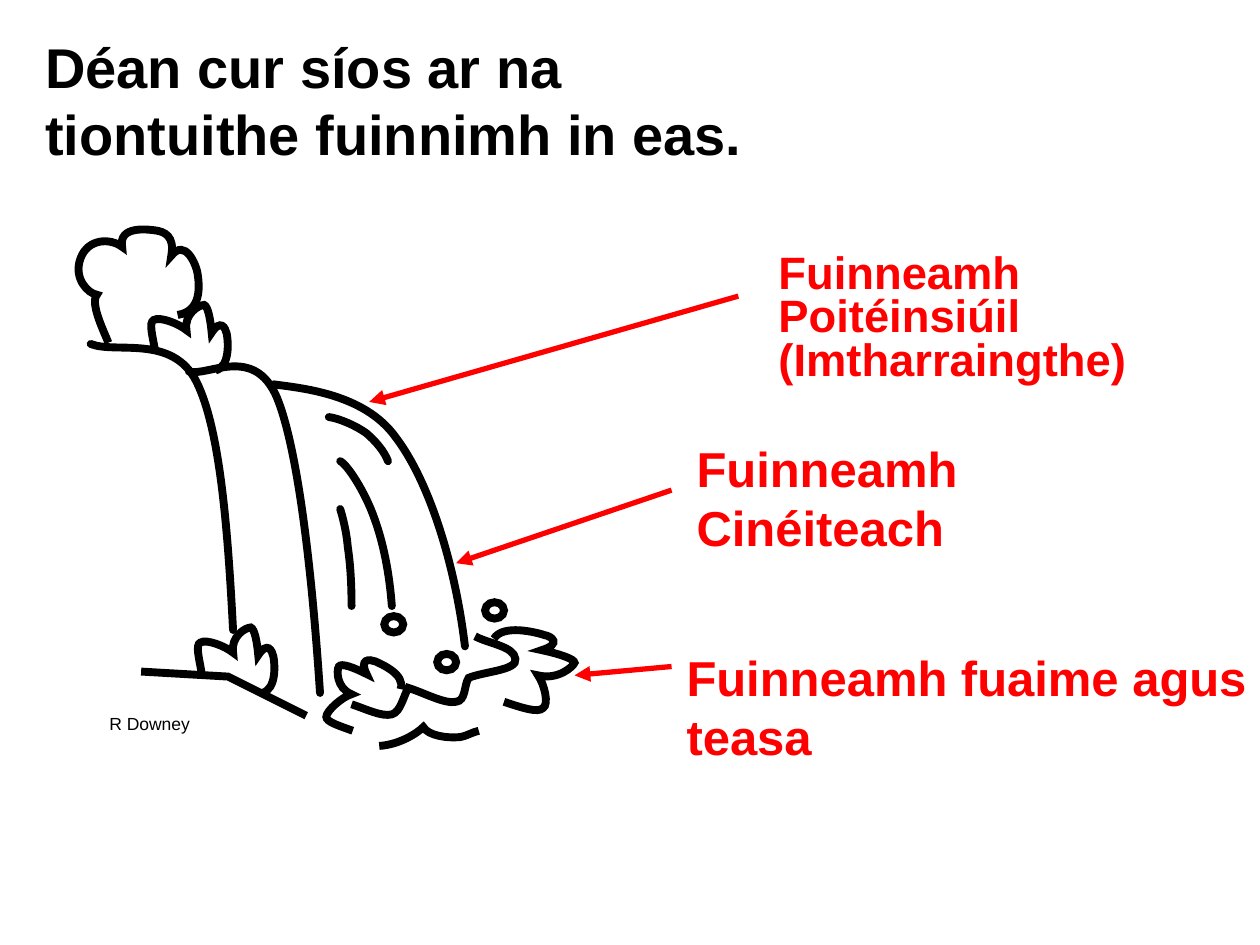
from dataclasses import dataclass

from lxml import etree
from pptx import Presentation
from pptx.dml.color import RGBColor
from pptx.enum.shapes import MSO_CONNECTOR, MSO_SHAPE
from pptx.oxml.ns import qn
from pptx.util import Inches, Pt

STRAIGHT = MSO_CONNECTOR.STRAIGHT
OVAL = MSO_SHAPE.OVAL


@dataclass(frozen=True)
class Theme:
    """Colours, type sizes and line widths of the slide."""
    font: str = "Arial"
    ink: RGBColor = RGBColor(0, 0, 0)
    accent: RGBColor = RGBColor(255, 0, 0)
    title: float = 32
    body: float = 25.9
    label: float = 28
    credit: float = 10
    arrow: float = 3
    stroke: float = 4.5


THEME = Theme()

FALLS = [
    [(2.17, 3.05), (2.38, 3.08), (2.89, 3.12), (3.14, 3.47),
     (3.4, 3.81), (3.61, 4.46), (3.69, 5.13)],
    [(1.5, 2.95), (1.65, 2.99), (2.02, 2.73), (2.2, 3.16),
     (2.37, 3.58), (2.48, 4.58), (2.54, 5.5)],
    [(0.72, 2.73), (0.92, 2.81), (1.37, 2.65), (1.56, 3.03),
     (1.75, 3.41), (1.81, 4.23), (1.85, 5)],
    [(2.7, 3.66), (2.76, 3.69), (2.9, 3.91), (2.97, 4.11),
     (3.04, 4.3), (3.09, 4.54), (3.11, 4.81)],
    [(2.7, 4.04), (2.71, 4.07), (2.75, 4.21), (2.76, 4.34),
     (2.78, 4.47), (2.79, 4.63), (2.79, 4.81)],
    [(2.61, 3.31), (2.69, 3.32), (2.83, 3.38), (2.91, 3.44),
     (2.98, 3.5), (3.05, 3.58), (3.08, 3.66)],
]
SPLASH = [
    [(2.79, 5.59), (2.91, 5.63), (3.03, 5.69), (3.11, 5.67),
     (3.18, 5.65), (3.2, 5.53), (3.24, 5.46),
     (3.37, 5.5), (3.53, 5.59), (3.62, 5.57),
     (3.7, 5.56), (3.68, 5.44), (3.72, 5.38),
     (3.84, 5.33), (4.11, 5.32), (4.09, 5.23),
     (4.08, 5.13), (3.88, 5.11), (3.77, 5.05)],
    [(4, 5.57), (4.15, 5.62), (4.27, 5.66), (4.31, 5.62),
     (4.36, 5.59), (4.32, 5.43), (4.27, 5.36),
     (4.43, 5.4), (4.55, 5.29), (4.56, 5.26),
     (4.56, 5.23), (4.44, 5.19), (4.3, 5.16),
     (4.46, 5.11), (4.38, 5.05), (4.32, 5.04),
     (4.26, 5.02), (3.99, 4.95), (3.92, 5.07)],
    [(2.8, 5.8), (2.69, 5.76), (2.59, 5.73), (2.59, 5.69),
     (2.59, 5.64), (2.72, 5.53), (2.79, 5.51),
     (2.67, 5.46), (2.67, 5.32), (2.69, 5.29),
     (2.71, 5.26), (2.81, 5.3), (2.91, 5.35),
     (2.85, 5.23), (2.93, 5.23), (2.98, 5.25),
     (3.02, 5.27), (3.22, 5.35), (3.18, 5.47)],
    [(3.01, 5.92), (3.17, 5.91), (3.31, 5.82), (3.36, 5.77),
     (3.4, 5.84), (3.55, 5.86), (3.65, 5.85),
     (3.71, 5.84), (3.75, 5.81), (3.8, 5.8)],
]
TREE = [
    (0.86, 2.72), (0.84, 2.66), (0.71, 2.41), (0.77, 2.34),
    (0.7, 2.33), (0.58, 2.21), (0.64, 2.05),
    (0.7, 1.89), (0.88, 1.89), (0.97, 1.96),
    (0.94, 1.79), (1.17, 1.82), (1.24, 1.83),
    (1.3, 1.84), (1.39, 1.87), (1.36, 2.03),
    (1.47, 1.89), (1.56, 2.1), (1.57, 2.18),
    (1.58, 2.25), (1.61, 2.47), (1.41, 2.5),
]
BUSH = [
    (1.23, 2.78), (1.21, 2.66), (1.18, 2.56), (1.22, 2.54),
    (1.27, 2.51), (1.42, 2.57), (1.48, 2.62),
    (1.46, 2.49), (1.58, 2.42), (1.62, 2.42),
    (1.65, 2.43), (1.67, 2.53), (1.68, 2.64),
    (1.75, 2.53), (1.79, 2.6), (1.8, 2.65),
    (1.81, 2.7), (1.83, 2.91), (1.71, 2.94),
]
LOW_BUSH = [(x + 0.37, y + 2.56) for x, y in BUSH]
GROUND = [(2.43, 5.68), (1.81, 5.37), (1.12, 5.33)]
DROPS = [(3.05, 4.89), (3.85, 4.78), (3.47, 5.19)]
ARROWS = [
    ((5.86, 2.35), (2.93, 3.19)),
    ((5.33, 3.89), (3.62, 4.47)),
    ((5.33, 5.29), (4.56, 5.36)),
]


def add_text(shapes, box, text, size, color, bold=True, wrap=True, before=0, pitch=None):
    """Add a text box with one paragraph."""
    frame = shapes.add_textbox(*map(Inches, box)).text_frame
    frame.word_wrap = wrap
    para = frame.paragraphs[0]
    para.text = text
    para.space_before = Pt(before)
    para.line_spacing = pitch
    font = para.font
    font.name, font.size, font.bold = THEME.font, Pt(size), bold
    font.color.rgb = color


def add_arrow(shapes, start, end):
    """Add a red arrow from start to end."""
    line = shapes.add_connector(STRAIGHT, *map(Inches, start + end))
    line.line.color.rgb = THEME.accent
    line.line.width = Pt(THEME.arrow)
    etree.SubElement(line.line._get_or_add_ln(), qn("a:tailEnd"), type="triangle")
    etree.SubElement(line._element.spPr, qn("a:effectLst"))


def ink(shape, cap="flat"):
    """Give a shape a plain black outline."""
    shape.shadow.inherit = False
    shape.fill.background()
    shape.line.color.rgb = THEME.ink
    shape.line.width = Pt(THEME.stroke)
    edge = shape.line._get_or_add_ln()
    edge.set("cap", cap)
    etree.SubElement(edge, qn("a:miter"), lim="800000")


def add_path(shapes, points, cap="flat", curved=True):
    """Add an open outline, with each three points after the first as a curve."""
    spots = [(Inches(x), Inches(y)) for x, y in points]
    pen = shapes.build_freeform(*spots[0], scale=1.0)
    pen.add_line_segments(spots[1:], close=False)
    shape = pen.convert_to_shape()
    if curved:
        trace = shape._element.find(".//" + qn("a:path"))
        steps = trace.findall(qn("a:lnTo"))
        for i in range(0, len(steps), 3):
            curve = etree.SubElement(trace, qn("a:cubicBezTo"))
            for step in steps[i:i + 3]:
                curve.append(step[0])
                trace.remove(step)
    ink(shape, cap)


def add_scene(shapes):
    """Draw the waterfall with its plants, ground and drops."""
    for points in FALLS:
        add_path(shapes, points, cap="rnd")
    for points in SPLASH + [BUSH, LOW_BUSH, TREE]:
        add_path(shapes, points)
    add_path(shapes, GROUND, curved=False)
    for x, y in DROPS:
        ink(shapes.add_shape(OVAL, *map(Inches, (x, y, 0.15, 0.13))))
    add_text(shapes, (0.77, 5.61, 0.85, 0.27), "R Downey", THEME.credit,
             THEME.ink, bold=False, wrap=False)


def main():
    """Build and save the slide."""
    deck = Presentation()
    deck.slide_width, deck.slide_height = Inches(10), Inches(7.5)
    shapes = deck.slides.add_slide(deck.slide_layouts[6]).shapes
    add_text(shapes, (0.26, 0.21, 6.32, 1.18),
             "Déan cur síos ar na tiontuithe fuinnimh in eas.", THEME.title, THEME.ink)
    add_text(shapes, (6.08, 1.97, 3.92, 1.18), "Fuinneamh Poitéinsiúil (Imtharraingthe)",
             THEME.body, THEME.accent, before=10, pitch=0.8)
    add_text(shapes, (5.43, 3.43, 2.95, 0.53), "Fuinneamh Cinéiteach",
             THEME.label, THEME.accent, before=6)
    add_text(shapes, (5.35, 5.09, 4.65, 0.72), "Fuinneamh fuaime agus teasa",
             THEME.label, THEME.accent, before=6)
    for start, end in ARROWS:
        add_arrow(shapes, start, end)
    add_scene(shapes.add_group_shape().shapes)
    deck.save("out.pptx")


if __name__ == "__main__":
    main()
